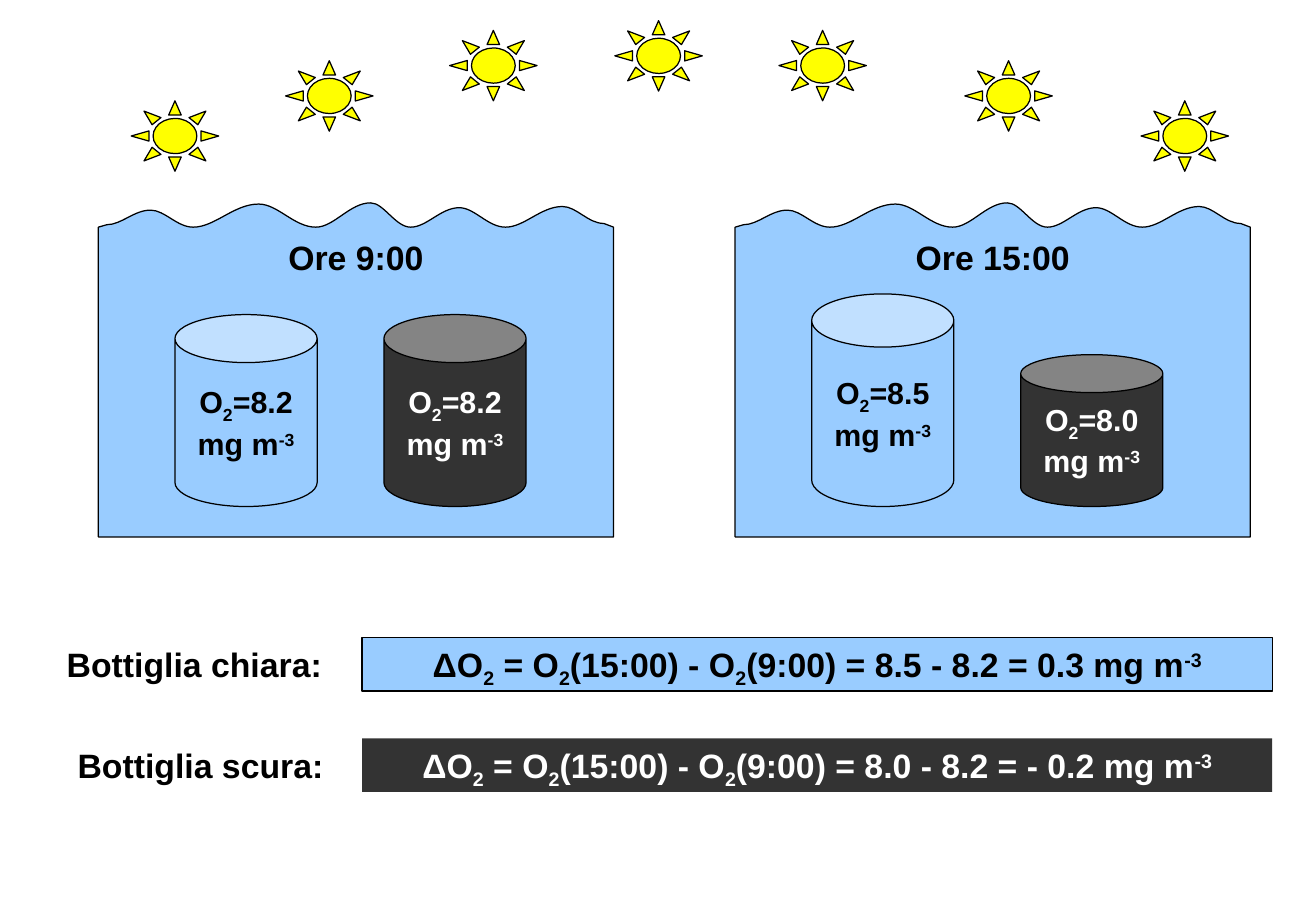
from pptx import Presentation
from pptx.dml.color import RGBColor
from pptx.enum.shapes import MSO_SHAPE
from pptx.enum.text import MSO_ANCHOR, MSO_AUTO_SIZE, PP_ALIGN
from pptx.oxml.ns import qn
from pptx.util import Inches, Pt

CAN, SUN, RECT = MSO_SHAPE.CAN, MSO_SHAPE.SUN, MSO_SHAPE.RECTANGLE
TOP, MIDDLE = MSO_ANCHOR.TOP, MSO_ANCHOR.MIDDLE
LEFT, CENTER = PP_ALIGN.LEFT, PP_ALIGN.CENTER
GROW = MSO_AUTO_SIZE.SHAPE_TO_FIT_TEXT

HUES = {"water": "99CCFF", "dark": "333333", "sun": "FFFF00",
        "black": "000000", "white": "FFFFFF"}
BASE = {"_": "-25000", "^": "30000"}  # subscript and superscript marks

deck = Presentation()
deck.slide_width, deck.slide_height = Inches(10.83), Inches(7.5)
slide = deck.slides.add_slide(deck.slide_layouts[6])
shapes = slide.shapes


def paint(shape, fill, line=True):
    shape.shadow.inherit = False
    shape.fill.solid()
    shape.fill.fore_color.rgb = RGBColor.from_string(HUES[fill])
    if line:
        shape.line.color.rgb = RGBColor.from_string(HUES["black"])
        shape.line.width = Pt(0.75)
    else:
        shape.line.fill.background()


def write(shape, parts, size=20, hue="black", align=CENTER, anchor=TOP, wrap=True):
    frame = shape.text_frame
    frame.word_wrap = wrap
    frame.vertical_anchor = anchor
    if anchor == TOP:
        frame.auto_size = GROW
    para = frame.paragraphs[0]
    para.alignment = align
    for part in parts:
        if part == "\n":
            para.add_line_break()
            continue
        run = para.add_run()
        run.text = part.lstrip("_^")
        run.font.name, run.font.size, run.font.bold = "Arial", Pt(size), True
        run.font.color.rgb = RGBColor.from_string(HUES[hue])
        if part[0] in BASE:
            run.font._element.set("baseline", BASE[part[0]])


# Water tanks with their bottles: left, time label, label width, bottles
waves = [(0.07, 1.85), (0.43, 1.73), (0.78, 1.87), (1.32, 1.68), (1.79, 1.87),
         (2.24, 1.67), (2.57, 1.87), (2.97, 1.71), (3.35, 1.87), (3.82, 1.7),
         (4.16, 1.84)]
tanks = [
    (0.81, "Ore 9:00", 1.53, [("water", "black", 1.58, "8.2"),
                              ("dark", "white", 1.58, "8.2")]),
    (6.05, "Ore 15:00", 1.9, [("water", "black", 1.75, "8.5"),
                              ("dark", "white", 1.25, "8.0")]),
]
for left, label, wide, cans in tanks:
    points = [waves[0]]
    for (x0, y0), (x1, y1) in zip(waves, waves[1:]):
        gap = x1 - x0
        points += [(x0 + gap / 3, y0), (x1 - gap * 0.38, y1), (x1, y1)]
    points += [(4.24, 1.87), (4.24, 4.42), (0, 4.42)]
    pen = shapes.build_freeform(Inches(left), Inches(1.87))
    pen.add_line_segments([(Inches(left + x), Inches(y)) for x, y in points])
    tank = pen.convert_to_shape()
    paint(tank, "water")

    # Join each three wave points into one curve
    lines = list(tank._element.iter(qn("a:lnTo")))
    for i in range(1, 3 * len(waves) - 2, 3):
        curve = lines[i].makeelement(qn("a:cubicBezTo"), {})
        lines[i].addprevious(curve)
        for line in lines[i:i + 3]:
            curve.append(line[0])
            line.getparent().remove(line)

    for i, (fill, hue, high, value) in enumerate(cans):
        can = shapes.add_shape(CAN, Inches(left + 0.63 + 1.72 * i), Inches(4.17 - high),
                               Inches(1.17), Inches(high))
        can.adjustments[0] = 0.25 * high / 1.17
        paint(can, fill)
        write(can, ["O", "_2", "=" + value, "\n", "mg m", "^-3"],
              size=18, hue=hue, anchor=MIDDLE, wrap=False)

    box = shapes.add_textbox(Inches(left + 2.12 - wide / 2), Inches(1.9),
                             Inches(wide), Inches(0.43))
    write(box, [label])

# Path of the sun
for x, y in [(1.08, 0.83), (2.35, 0.5), (3.7, 0.25), (5.06, 0.17),
             (6.41, 0.25), (7.94, 0.5), (9.39, 0.83)]:
    sun = shapes.add_shape(SUN, Inches(x), Inches(y), Inches(0.72), Inches(0.58))
    paint(sun, "sun")

# Oxygen balance of each bottle
rows = [
    (5.25, 0.45, 2.49, "Bottiglia chiara:", "water", "black", "8.5 - 8.2 = 0.3"),
    (6.08, 0.54, 2.41, "Bottiglia scura:", "dark", "white", "8.0 - 8.2 = - 0.2"),
]
for y, x, wide, label, fill, hue, result in rows:
    bar = shapes.add_shape(RECT, Inches(2.98), Inches(y), Inches(7.49), Inches(0.44))
    paint(bar, fill, line=fill == "water")
    write(bar, ["ΔO", "_2", " = O", "_2", "(15:00) - O", "_2",
                "(9:00) = " + result + " mg m", "^-3"], hue=hue)
    box = shapes.add_textbox(Inches(x), Inches(y), Inches(wide), Inches(0.43))
    write(box, [label], align=LEFT, wrap=False)

deck.save("out.pptx")
